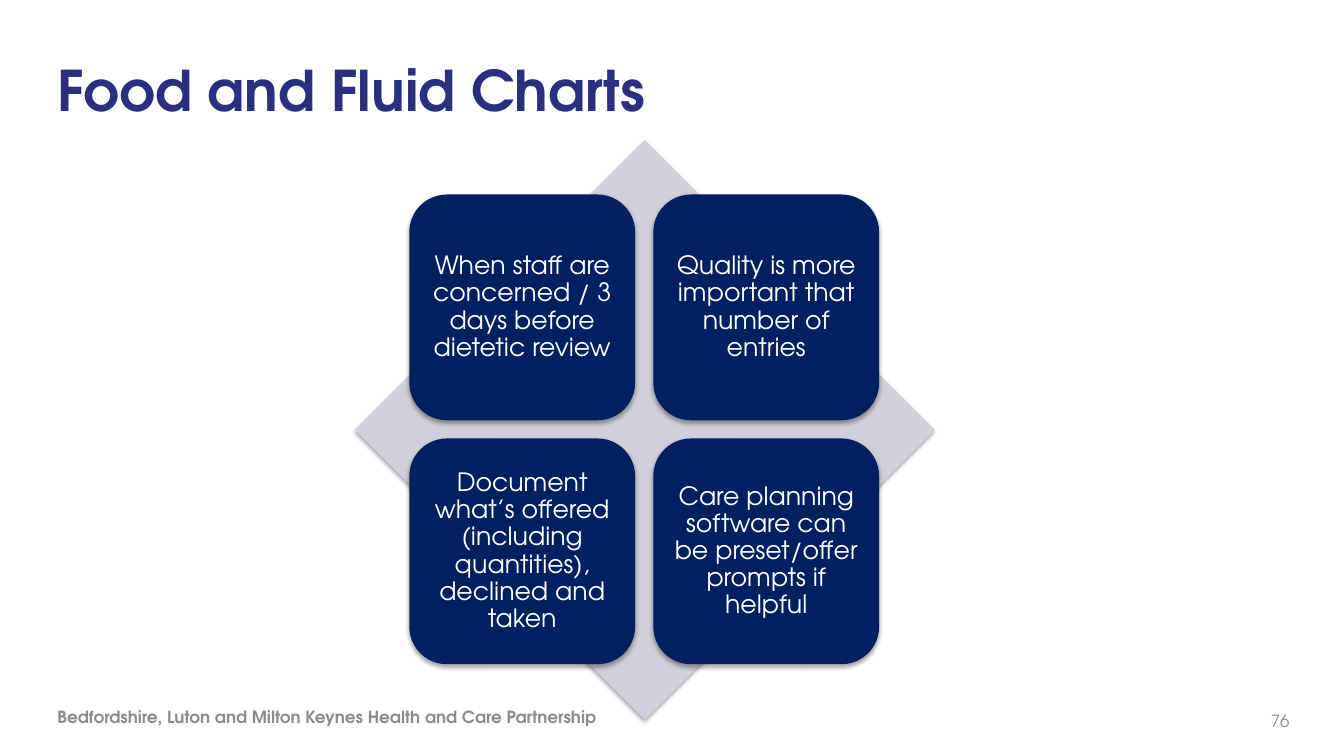
"""Builds the Food and Fluid Charts slide: four cards over a diamond."""
from lxml.etree import SubElement
from pptx import Presentation
from pptx.dml.color import RGBColor
from pptx.enum.shapes import MSO_SHAPE
from pptx.enum.text import MSO_ANCHOR, MSO_AUTO_SIZE, PP_ALIGN
from pptx.oxml.ns import qn
from pptx.util import Inches, Pt

INDIGO = RGBColor(0x2B, 0x30, 0x7E)
NAVY = RGBColor(0x00, 0x20, 0x60)
LAVENDER = RGBColor(0xD0, 0xD0, 0xDC)
GREY = RGBColor(0x8C, 0x8C, 0x8C)
WHITE = RGBColor(0xFF, 0xFF, 0xFF)

CARDS = [
    "When staff are concerned / 3 days before dietetic review",
    "Quality is more important that number of entries",
    "Document what’s offered (including quantities), declined and taken",
    "Care planning software can be preset/offer prompts if helpful",
]
CARD_LEFT, CARD_TOP, CARD_SIZE, CARD_PITCH = 4.06, 1.93, 2.24, 2.42


class SlideBuilder:
    """Holds the text style and the current slide."""

    font_name = "TeX Gyre Adventor"

    def __init__(self, slide):
        """Keep the slide to draw on."""
        self.slide = slide

    def set_text(self, frame, text, size, color, bold=False,
                 align=PP_ALIGN.LEFT, inset=0, spacing=1.0):
        """Fill a text frame with one formatted paragraph."""
        frame.text = text
        paragraph = frame.paragraphs[0]
        margin = Inches(inset)
        formats = [
            (frame, {"word_wrap": True, "auto_size": MSO_AUTO_SIZE.NONE,
                     "vertical_anchor": MSO_ANCHOR.MIDDLE,
                     "margin_left": margin, "margin_right": margin,
                     "margin_top": margin, "margin_bottom": margin}),
            (paragraph, {"alignment": align, "line_spacing": spacing}),
            (paragraph.font, {"name": self.font_name, "size": Pt(size),
                              "bold": bold}),
        ]
        for target, values in formats:
            for name, value in values.items():
                setattr(target, name, value)
        paragraph.font.color.rgb = color

    def title(self, text, left, top, width, height):
        """Place and format the title placeholder."""
        heading = self.slide.shapes.title
        place = {"left": left, "top": top, "width": width, "height": height}
        for name, value in place.items():
            setattr(heading, name, Inches(value))
        self.set_text(heading.text_frame, text, 40, INDIGO, bold=True)

    def footer(self, text, left, top, width, height, **style):
        """Add a small grey line at the foot of the slide."""
        box = self.slide.shapes.add_textbox(*map(Inches, (left, top, width, height)))
        self.set_text(box.text_frame, text, 12, GREY, **style)

    def panel(self, preset, left, top, size, color):
        """Add a square, borderless shape with a soft shadow below it."""
        panel = self.slide.shapes.add_shape(
            preset, *map(Inches, (left, top, size, size)))
        panel.fill.solid()
        panel.fill.fore_color.rgb = color
        panel.line.fill.background()
        panel.shadow.inherit = False
        effects = panel.element.spPr.find(qn("a:effectLst"))
        shadow = SubElement(effects, qn("a:outerShdw"), blurRad=str(Pt(3.1)),
                            dist=str(Pt(1.8)), dir="5400000", rotWithShape="0")
        shade = SubElement(shadow, qn("a:srgbClr"), val="000000")
        SubElement(shade, qn("a:alpha"), val="35000")
        return panel

    def card(self, text, left, top, size):
        """Add a rounded navy card with centred white text."""
        card = self.panel(MSO_SHAPE.ROUNDED_RECTANGLE, left, top, size, NAVY)
        self.set_text(card.text_frame, text, 18, WHITE, align=PP_ALIGN.CENTER,
                      inset=0.07, spacing=0.9)


def main():
    """Build and save the slide."""
    deck = Presentation()
    deck.slide_width, deck.slide_height = Inches(13.33), Inches(7.5)
    builder = SlideBuilder(deck.slides.add_slide(deck.slide_layouts[5]))
    builder.title("Food and Fluid Charts", 0.57, 0.21, 9.64, 1.35)
    builder.footer("Bedfordshire, Luton and Milton Keynes Health and Care Partnership",
                   0.57, 6.91, 8.1, 0.4, bold=True)
    builder.footer("76", 12.26, 6.95, 0.53, 0.4, align=PP_ALIGN.RIGHT)
    builder.panel(MSO_SHAPE.DIAMOND, 3.52, 1.39, 5.75, LAVENDER)
    for index, text in enumerate(CARDS):
        row, column = divmod(index, 2)
        builder.card(text, CARD_LEFT + column * CARD_PITCH,
                     CARD_TOP + row * CARD_PITCH, CARD_SIZE)
    deck.save("out.pptx")


if __name__ == "__main__":
    main()
